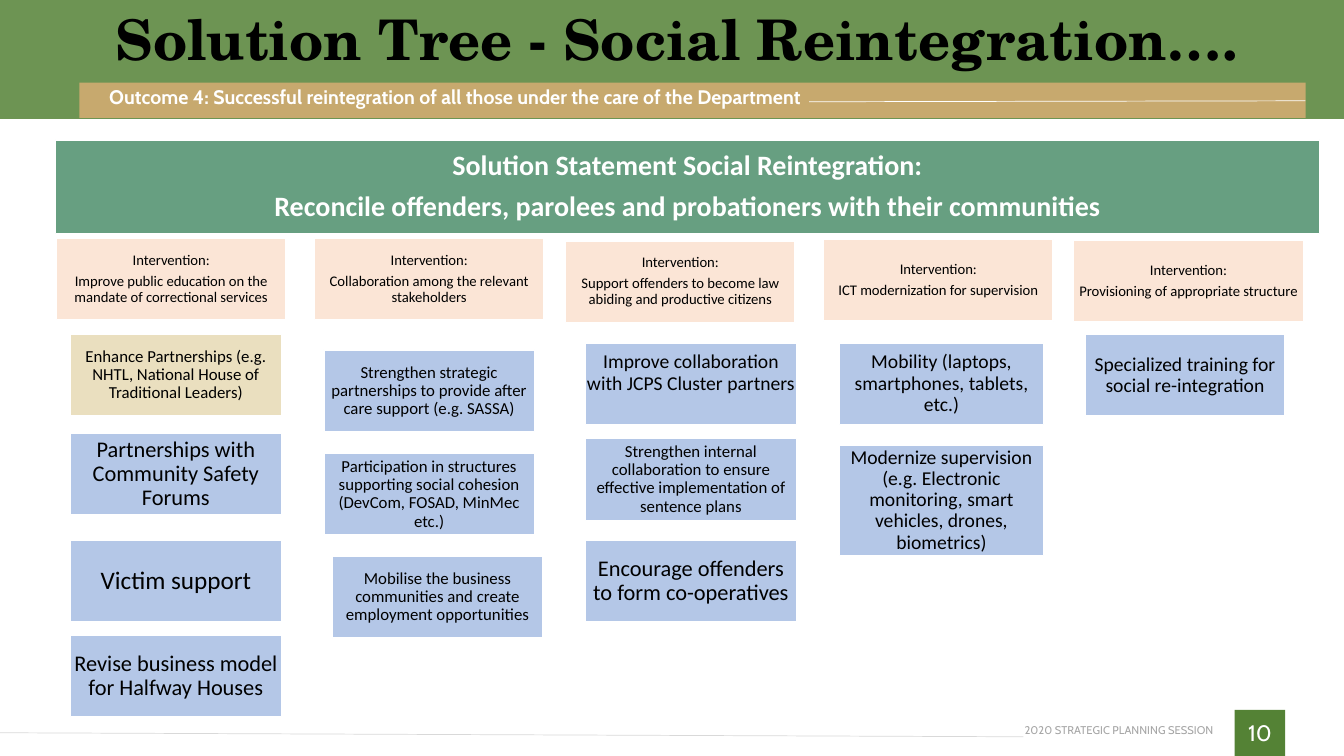
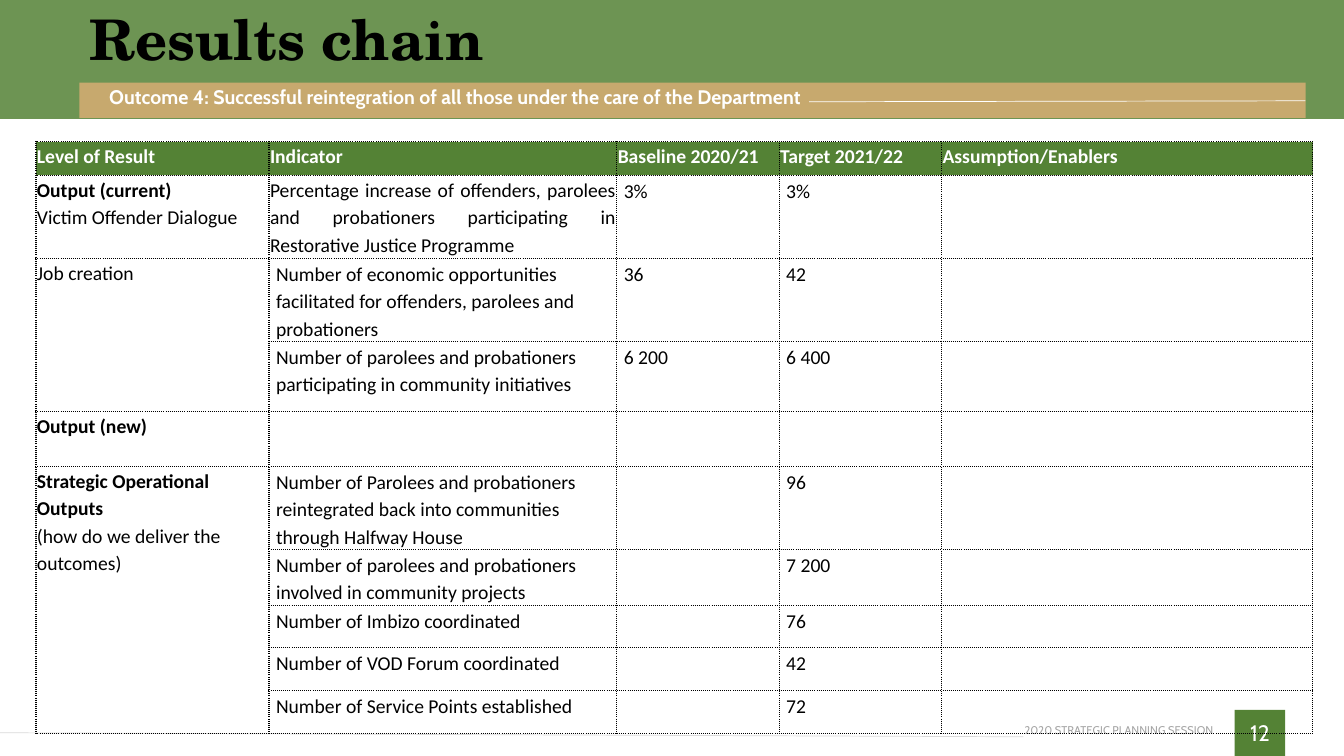
from typing import NamedTuple

from lxml import etree
from pptx import Presentation
from pptx.dml.color import RGBColor
from pptx.enum.shapes import MSO_CONNECTOR, MSO_SHAPE
from pptx.enum.text import MSO_ANCHOR, PP_ALIGN
from pptx.oxml.ns import qn
from pptx.util import Pt

RECT = MSO_SHAPE.RECTANGLE
STRAIGHT = MSO_CONNECTOR.STRAIGHT
MIDDLE, TOP = MSO_ANCHOR.MIDDLE, MSO_ANCHOR.TOP
LEFT, CENTER, RIGHT, JUSTIFY = PP_ALIGN.LEFT, PP_ALIGN.CENTER, PP_ALIGN.RIGHT, PP_ALIGN.JUSTIFY

SLIDE_W, SLIDE_H = 960, 540
GREEN, GOLD, TEAL = "548235", "C7A96E", "679F81"
PEACH, SAND, BLUE = "FBE5D6", "EADFBF", "B4C7E7"
WHITE, BLACK, GREY, PALE = "FFFFFF", "000000", "A6A6A6", "D9D9D9"
DISPLAY, HEADING, BODY = "TeX Gyre Schola", "Cabin", "Calibri"

OUTCOME = "Outcome 4: Successful reintegration of all those under the care of the Department"
FOOTER = "2020 STRATEGIC PLANNING SESSION"
CARD_H = 58.3


class Card(NamedTuple):
    text: str
    size: float
    top: float
    fill: str = BLUE
    height: float = CARD_H
    shift: float = 0
    bottom_inset: float = 0.7


class Column(NamedTuple):
    left: float
    top: float
    intervention: str
    card_left: float
    card_width: float
    cards: list


COLUMNS = [
    Column(40.3, 170, "Improve public education on the mandate of correctional services", 50.4, 150.5, [
        Card("Enhance Partnerships (e.g. NHTL, National House of Traditional Leaders)", 12, 239, fill=SAND),
        Card("Partnerships with Community Safety Forums", 16, 309.6),
        Card("Victim support", 18, 386),
        Card("Revise business model for Halfway Houses", 16, 453.6)]),
    Column(224.6, 170, "Collaboration among the relevant stakeholders", 231.3, 150.5, [
        Card("Strengthen strategic partnerships to provide after care support (e.g. SASSA)", 12, 250),
        Card("Participation in structures supporting social cohesion "
             "(DevCom, FOSAD, MinMec etc.)", 12, 324),
        Card("Mobilise the business communities and create employment opportunities",
             12, 397.5, shift=6)]),
    Column(404, 172, "Support offenders to become law abiding and productive citizens", 418.3, 150.5, [
        Card("Improve collaboration with JCPS Cluster partners", 14, 245, bottom_inset=16),
        Card("Strengthen internal collaboration to ensure effective implementation "
             "of sentence plans", 12, 313.3),
        Card("Encourage offenders to form co-operatives", 16, 386)]),
    Column(588.3, 171, "ICT modernization for supervision", 599.5, 146, [
        Card("Mobility (laptops, smartphones, tablets, etc.)", 14, 245),
        Card("Modernize supervision (e.g. Electronic monitoring, smart vehicles, "
             "drones, biometrics)", 14, 318.2, height=78.5)]),
    Column(767, 171.5, "Provisioning of appropriate structure", 775, 143, [
        Card("Specialized training for social re-integration", 14, 239)]),
]

HEADERS = ["Level of Result", "Indicator", "Baseline 2020/21", "Target 2021/22", "Assumption/Enablers"]
COL_WIDTHS = [166.5, 248.4, 116, 116, 265]
ROW_HEIGHTS = [24, 59.3, 59.3, 50, 39.3, 59.3, 40, 30.5, 30.5, 30.5]
# First table row and number of rows of each level, then its bold and plain text
LEVELS = [
    (1, 1, "Output (current)", "Victim Offender Dialogue"),
    (2, 2, "", "Job creation"),
    (4, 1, "Output (new)", ""),
    (5, 5, "Strategic Operational Outputs", "(how do we deliver the outcomes)"),
]
# Indicator, baseline, target
INDICATORS = [
    ("Percentage increase of offenders, parolees and probationers participating in "
     "Restorative Justice Programme", "3%", "3%"),
    ("Number of economic opportunities facilitated for offenders, parolees and probationers", "36", "42"),
    ("Number of parolees and probationers participating in community initiatives", "6 200", "6 400"),
    ("", "", ""),
    ("Number of Parolees and probationers reintegrated back into communities "
     "through Halfway House", "", "96"),
    ("Number of parolees and probationers involved in community projects", "", "7 200"),
    ("Number of Imbizo coordinated", "", "76"),
    ("Number of VOD Forum coordinated", "", "42"),
    ("Number of Service Points established", "", "72"),
]


def rgb(value):
    return RGBColor.from_string(value)


def set_font(p, size, name, color, bold=False):
    p.font.size = Pt(size)
    p.font.name = name
    p.font.color.rgb = rgb(color)
    p.font.bold = bold


def set_margins(target, left, top, right, bottom):
    """Set the insets of a text frame or a table cell."""
    target.margin_left, target.margin_top = Pt(left), Pt(top)
    target.margin_right, target.margin_bottom = Pt(right), Pt(bottom)


def add_rect(slide, box, fill, line=None):
    sp = slide.shapes.add_shape(RECT, *map(Pt, box))
    sp.shadow.inherit = False
    sp.fill.solid()
    sp.fill.fore_color.rgb = rgb(fill)
    if line:
        sp.line.color.rgb = rgb(line)
        sp.line.width = Pt(1)
    else:
        sp.line.fill.background()
    return sp


def add_label(slide, box, text, size, name, color, bold=False, align=LEFT, inset=0):
    tf = slide.shapes.add_textbox(*map(Pt, box)).text_frame
    tf.word_wrap = True
    tf.vertical_anchor = MIDDLE
    set_margins(tf, inset, 0, inset, 0)
    p = tf.paragraphs[0]
    p.text = text
    p.alignment = align
    set_font(p, size, name, color, bold)
    return p


def add_rule(slide, x1, y1, x2, y2, color):
    line = slide.shapes.add_connector(STRAIGHT, Pt(x1), Pt(y1), Pt(x2), Pt(y2))
    line.line.color.rgb = rgb(color)
    line.line.width = Pt(0.5)
    etree.SubElement(line._element.spPr, qn("a:effectLst"))


def add_panel(slide, box, lines, size, fill, color=BLACK, bold=False, bottom_inset=0.7):
    """A filled box with centred paragraphs."""
    tf = add_rect(slide, box, fill, WHITE).text_frame
    tf.word_wrap = True
    tf.vertical_anchor = MIDDLE
    set_margins(tf, 0.7, 0.7, 0.7, bottom_inset)
    for i, text in enumerate(lines):
        p = tf.add_paragraph() if i else tf.paragraphs[0]
        p.text = text
        p.alignment = CENTER
        p.line_spacing = 0.9
        p.space_after = Pt(round(size * 0.35, 1))
        set_font(p, size, BODY, color, bold)


def add_header(slide, title, title_left):
    band = add_rect(slide, (0, 0, SLIDE_W, 85), GREEN)
    color = band.fill._xPr.find(qn("a:solidFill"))[0]
    etree.SubElement(color, qn("a:alpha"), val="85000")
    add_rect(slide, (56.7, 59, 876, 25.2), GOLD)
    add_rule(slide, 578, 72.7, 932.5, 72, WHITE)
    p = add_label(slide, (title_left, 0, SLIDE_W - title_left, 61), title,
                  40, DISPLAY, BLACK, bold=True, inset=7.2)
    p.line_spacing = 0.9
    p = add_label(slide, (78, 60.5, 541, 17.3), OUTCOME, 14, HEADING, WHITE, bold=True)
    p.space_after = Pt(3)


def add_footer(slide, number):
    add_rect(slide, (882, 507, 36, 33), GREEN)
    add_label(slide, (882, 507, 36, 33), number, 16, HEADING, WHITE, align=CENTER)
    add_label(slide, (731, 517, 136, 9.4), FOOTER, 8, HEADING, GREY, align=RIGHT)
    add_rule(slide, 731, 526.3, 0, 523.4, PALE)


def new_slide(prs, number, title, title_left):
    slide = prs.slides.add_slide(prs.slide_layouts[6])
    add_footer(slide, number)
    add_header(slide, title, title_left)
    return slide


def add_column(slide, column):
    add_panel(slide, (column.left, column.top, 164, CARD_H),
              ["Intervention:", column.intervention], 10.5, PEACH)
    for card in column.cards:
        box = (column.card_left + card.shift, card.top, column.card_width, card.height)
        add_panel(slide, box, [card.text], card.size, card.fill, bottom_inset=card.bottom_inset)


def set_borders(cell):
    tc_pr = cell._tc.get_or_add_tcPr()
    for i, side in enumerate(("lnL", "lnR", "lnT", "lnB")):
        ln = etree.Element(qn(f"a:{side}"), w=str(Pt(1)))
        fill = etree.SubElement(ln, qn("a:solidFill"))
        etree.SubElement(fill, qn("a:srgbClr"), val=BLACK)
        etree.SubElement(ln, qn("a:prstDash"), val="sysDot")
        tc_pr.insert(i, ln)


def write_cell(cell, lines, color=BLACK, align=LEFT, tight=False):
    """Write (text, bold) lines; a tight cell has almost no insets."""
    cell.vertical_anchor = TOP
    if tight:
        set_margins(cell, 0.7, 0, 0.7, 0)
    else:
        set_margins(cell, 5, 0.7, 5, 0)
    tf = cell.text_frame
    for i, (text, bold) in enumerate(lines):
        p = tf.add_paragraph() if i else tf.paragraphs[0]
        p.text = text
        p.alignment = align
        p.line_spacing = 1.15
        set_font(p, 14, BODY, color, bold)


def add_results_table(slide, left, top):
    frame = slide.shapes.add_table(len(ROW_HEIGHTS), len(COL_WIDTHS), Pt(left), Pt(top),
                                   Pt(sum(COL_WIDTHS)), Pt(sum(ROW_HEIGHTS)))
    table = frame.table
    table.horz_banding = False
    for col, width in zip(table.columns, COL_WIDTHS):
        col.width = Pt(width)
    for row, height in zip(table.rows, ROW_HEIGHTS):
        row.height = Pt(height)
    for cell in table.iter_cells():
        cell.fill.background()
    for c, text in enumerate(HEADERS):
        cell = table.cell(0, c)
        cell.fill.solid()
        cell.fill.fore_color.rgb = rgb(GREEN)
        write_cell(cell, [(text, True)], WHITE, tight=True)
    for first, count, lead, detail in LEVELS:
        cell = table.cell(first, 0)
        if count > 1:
            cell.merge(table.cell(first + count - 1, 0))
        write_cell(cell, [line for line in ((lead, True), (detail, False)) if line[0]], tight=True)
    for r, values in enumerate(INDICATORS, 1):
        for c, text in enumerate((*values, ""), 1):
            justified = (r, c) == (1, 1)
            write_cell(table.cell(r, c), [(text, False)],
                       align=JUSTIFY if justified else LEFT, tight=justified)
    for cell in table.iter_cells():
        set_borders(cell)


def build_solution_tree(prs):
    slide = new_slide(prs, "10", "Solution Tree - Social Reintegration….", 75.6)
    add_panel(slide, (39.6, 100, 903, 67),
              ["Solution Statement Social Reintegration:",
               "Reconcile offenders, parolees and probationers with their communities"],
              20, TEAL, WHITE, bold=True)
    for column in COLUMNS:
        add_column(slide, column)


def build_results_chain(prs):
    slide = new_slide(prs, "12", "Results chain", 56.7)
    add_results_table(slide, 25.7, 101.2)


def main():
    prs = Presentation()
    prs.slide_width, prs.slide_height = Pt(SLIDE_W), Pt(SLIDE_H)
    build_solution_tree(prs)
    build_results_chain(prs)
    prs.save("out.pptx")


if __name__ == "__main__":
    main()
